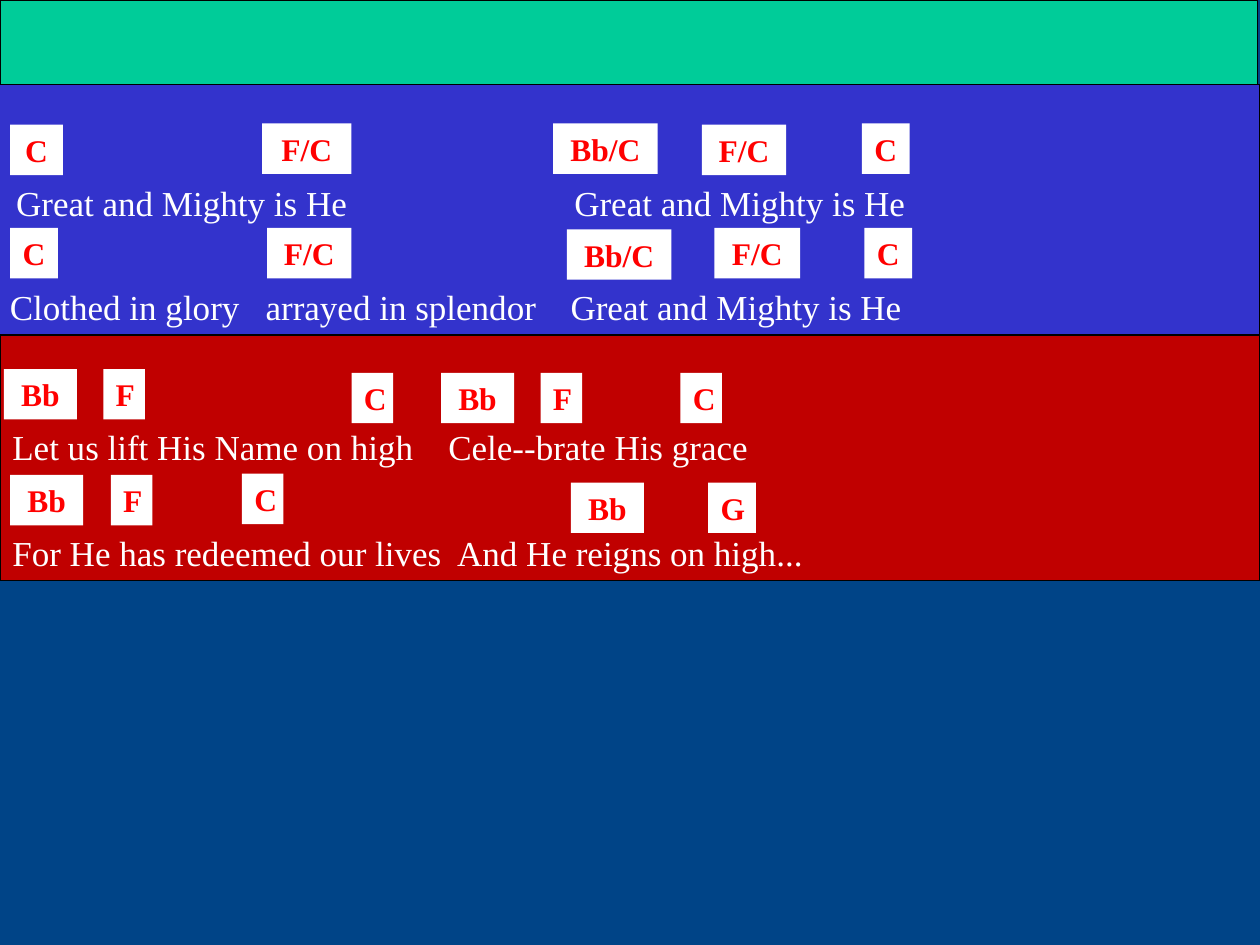
import pptx
import pptx.dml.color
import pptx.enum.shapes
import pptx.enum.text
import pptx.oxml.ns
import lxml.etree
from pptx.util import Inches

RGBColor = pptx.dml.color.RGBColor
NAVY = RGBColor(0x00, 0x44, 0x87)
GREEN = RGBColor(0x00, 0xCC, 0x99)
BLUE = RGBColor(0x33, 0x33, 0xCC)
DARK_RED = RGBColor(0xC0, 0x00, 0x00)
RED = RGBColor(0xFF, 0x00, 0x00)
WHITE = RGBColor(0xFF, 0xFF, 0xFF)
BLACK = RGBColor(0x00, 0x00, 0x00)
FONT = "Times New Roman"

# left, top, width, height, fill
BANDS = [
    (0, 2.66, 10, 1.95, DARK_RED),
    (-0.02, 0.67, 10.02, 1.99, BLUE),
    (0, 0, 9.98, 0.67, GREEN),
]

# left, top, height, line spacing, phrases, tab stops of the later phrases
LYRICS = [
    (0.03, 1.26, 0.57, 1.4,
     ["Great and Mighty is He", "Great and Mighty is He"], [4.43]),
    (-0.02, 2.08, 0.57, 1.4,
     ["Clothed in glory", "arrayed in splendor", "Great and Mighty is He"],
     [2.03, 4.45]),
    (0, 3.33, 0.44, 1,
     ["Let us lift His Name on high", "Cele--brate His grace"], [3.46]),
    (0, 4.17, 0.44, 1,
     ["For He has redeemed our lives", "And He reigns on high..."], [3.53]),
]

# chord, left, top, width; one row for each line of lyrics
CHORDS = [
    [("C", 0.08, 0.99, 0.42), ("F/C", 2.08, 0.98, 0.71),
     ("Bb/C", 4.39, 0.98, 0.83), ("F/C", 5.57, 0.99, 0.67),
     ("C", 6.84, 0.98, 0.38)],
    [("C", 0.08, 1.81, 0.38), ("F/C", 2.12, 1.81, 0.67),
     ("Bb/C", 4.5, 1.82, 0.83), ("F/C", 5.67, 1.81, 0.68),
     ("C", 6.86, 1.81, 0.38)],
    [("Bb", 0.03, 2.93, 0.58), ("F", 0.82, 2.93, 0.33),
     ("C", 2.79, 2.96, 0.33), ("Bb", 3.5, 2.96, 0.58),
     ("F", 4.29, 2.96, 0.33), ("C", 5.4, 2.96, 0.33)],
    [("Bb", 0.08, 3.77, 0.58), ("F", 0.88, 3.77, 0.33),
     ("C", 1.92, 3.76, 0.33), ("Bb", 4.53, 3.83, 0.58),
     ("G", 5.62, 3.83, 0.38)],
]
CHORD_HEIGHT = 0.4


def write_text(s, text, *, size, color, bold=False, align=None, spacing=None):
    tf = s.text_frame
    tf.word_wrap = True
    p = tf.paragraphs[0]
    p.alignment = align
    p.line_spacing = spacing
    r = p.add_run()
    r.text = text
    r.font.name = FONT
    r.font.size = pptx.util.Pt(size)
    r.font.bold = bold
    r.font.color.rgb = color
    return p


def add_tab_stops(p, stops):
    qn = pptx.oxml.ns.qn
    tabs = lxml.etree.SubElement(p._p.get_or_add_pPr(), qn("a:tabLst"))
    for stop in stops:
        lxml.etree.SubElement(tabs, qn("a:tab"), pos=str(Inches(stop)), algn="l")


def add_box(slide, left, top, width, height, fill, line=None):
    s = slide.shapes.add_shape(
        pptx.enum.shapes.MSO_SHAPE.RECTANGLE,
        Inches(left), Inches(top), Inches(width), Inches(height))
    s.shadow.inherit = False
    s.fill.solid()
    s.fill.fore_color.rgb = fill
    if line is None:
        s.line.fill.background()
    else:
        s.line.color.rgb = line
        s.line.width = pptx.util.Pt(0.75)
    return s


def add_chord(slide, name, left, top, width):
    s = add_box(slide, left, top, width, CHORD_HEIGHT, WHITE)
    write_text(s, name, size=18, color=RED, bold=True,
               align=pptx.enum.text.PP_ALIGN.CENTER)


def add_lyric(slide, left, top, height, spacing, phrases, stops):
    """Add one line of lyrics, its phrases set apart by tab stops."""
    s = slide.shapes.add_textbox(
        Inches(left), Inches(top), Inches(10), Inches(height))
    p = write_text(s, "\t".join(phrases), size=20, color=WHITE, spacing=spacing)
    add_tab_stops(p, stops)


def main():
    prs = pptx.Presentation()
    prs.slide_width, prs.slide_height = Inches(10), Inches(7.5)
    slide = prs.slides.add_slide(prs.slide_layouts[6])
    slide.background.fill.solid()
    slide.background.fill.fore_color.rgb = NAVY

    for *place, fill in BANDS:
        add_box(slide, *place, fill, line=BLACK)
    for chords, lyric in zip(CHORDS, LYRICS):
        for chord in chords:
            add_chord(slide, *chord)
        add_lyric(slide, *lyric)
    prs.save("out.pptx")


if __name__ == "__main__":
    main()
